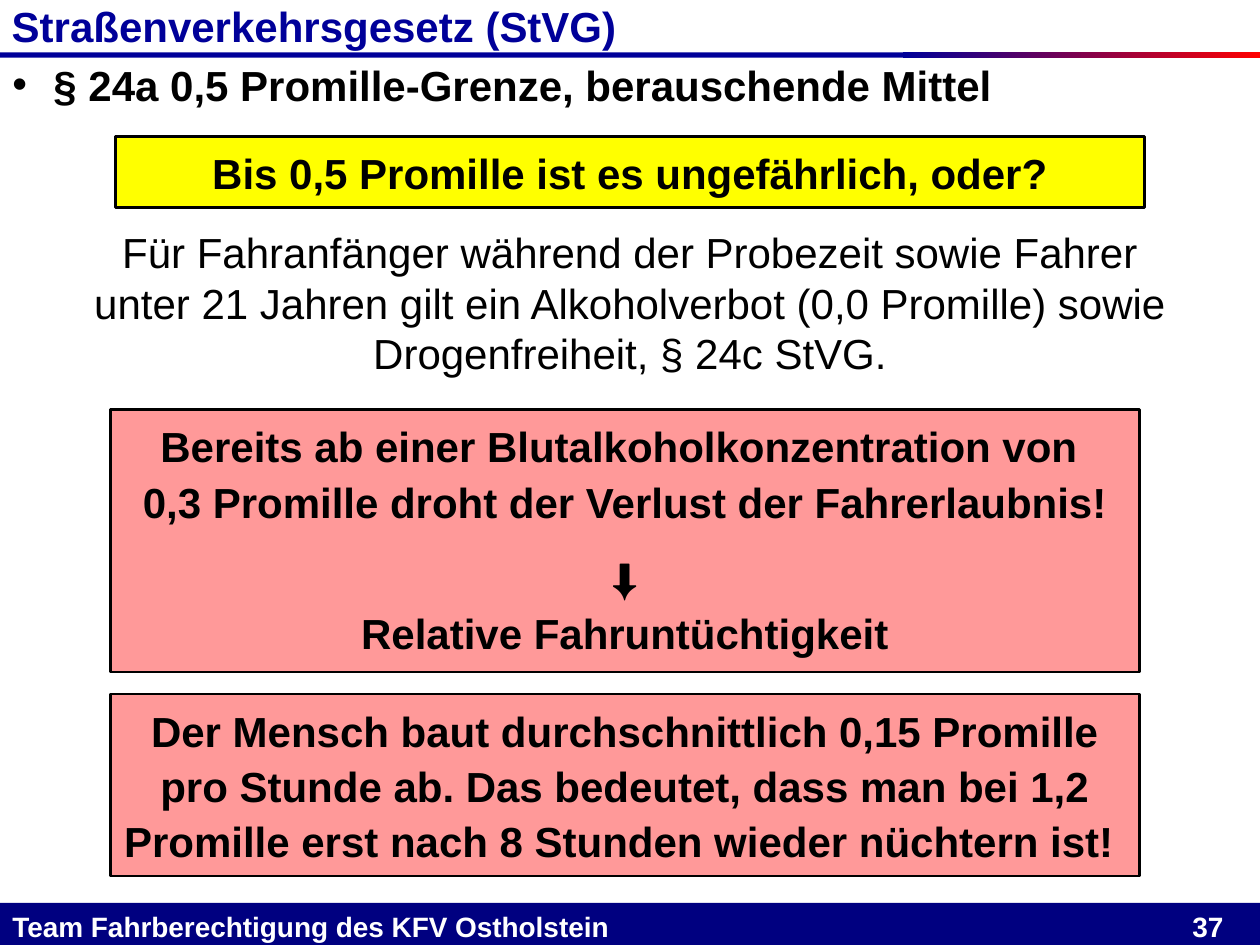
from pptx import Presentation
from pptx.dml.color import RGBColor
from pptx.enum.shapes import MSO_SHAPE
from pptx.enum.text import MSO_ANCHOR, PP_ALIGN
from pptx.oxml.ns import qn
from pptx.util import Pt
from lxml import etree

BLUE = RGBColor(0x00, 0x00, 0x99)
NAVY = RGBColor(0x00, 0x00, 0x80)
RED = RGBColor(0xFF, 0x00, 0x00)
YELLOW = RGBColor(0xFF, 0xFF, 0x00)
PINK = RGBColor(0xFF, 0x99, 0x99)
BLACK = RGBColor(0x00, 0x00, 0x00)
WHITE = RGBColor(0xFF, 0xFF, 0xFF)

presentation = Presentation()
presentation.slide_width, presentation.slide_height = Pt(720), Pt(540)
slide = presentation.slides.add_slide(presentation.slide_layouts[6])


def add_box(left, top, width, height, fill=None, outlined=False):
    """Add a rectangle, or a plain text box when there is no fill."""
    bounds = Pt(left), Pt(top), Pt(width), Pt(height)
    if fill is None:
        shape = slide.shapes.add_textbox(*bounds)
    else:
        shape = slide.shapes.add_shape(MSO_SHAPE.RECTANGLE, *bounds)
        shape.shadow.inherit = False
        shape.fill.solid()
        shape.fill.fore_color.rgb = fill
        if outlined:
            shape.line.color.rgb = BLACK
            shape.line.width = Pt(1.5)
        else:
            shape.line.fill.background()
    shape.text_frame.word_wrap = True
    shape.text_frame.vertical_anchor = MSO_ANCHOR.TOP
    return shape


def write(shape, paragraphs, size=24, color=BLACK, bold=True,
          align=PP_ALIGN.LEFT, spacing=1.0):
    """Fill a shape with paragraphs in one style."""
    text_frame = shape.text_frame
    text_frame.text = "\n".join(paragraphs)
    for index, paragraph in enumerate(text_frame.paragraphs):
        paragraph.alignment = align
        paragraph.line_spacing = spacing
        paragraph.space_before = Pt(12 if index else 0)
        for run in paragraph.runs:
            run.font.name = "Arial"
            run.font.size = Pt(size)
            run.font.bold = bold
            run.font.color.rgb = color


# Rule under the title: solid part, then blue fading to red
add_box(0, 30, 516, 3, BLUE)
fading_rule = add_box(516, 30, 204, 3, BLUE)
fading_rule.fill.gradient()
fading_rule.fill.gradient_angle = 0
for stop, color in zip(fading_rule.fill.gradient_stops, (BLUE, RED)):
    stop.color.rgb = color
    stop.position = 0 if color == BLUE else 1

# Footer with the page number on a right tab
footer = add_box(0, 516, 720, 24, NAVY)
write(footer, ["Team Fahrberechtigung des KFV Ostholstein\t37"], 16, WHITE)
footer_properties = footer.text_frame.paragraphs[0]._p.get_or_add_pPr()
tab_list = etree.SubElement(footer_properties, qn("a:tabLst"))
etree.SubElement(tab_list, qn("a:tab"), pos=str(Pt(692)), algn="r")

# Title
title = add_box(0, 0, 660, 29)
title_frame = title.text_frame
title_frame.margin_left = Pt(6.7)
title_frame.margin_right = title_frame.margin_top = title_frame.margin_bottom = 0
write(title, ["Straßenverkehrsgesetz (StVG)"], color=BLUE)

# Bulleted heading
heading = add_box(0, 36, 654, 30)
write(heading, ["§ 24a 0,5 Promille-Grenze, berauschende Mittel"], spacing=0.8)
heading_properties = heading.text_frame.paragraphs[0]._p.get_or_add_pPr()
heading_properties.set("marL", str(Pt(23.5)))
heading_properties.set("indent", str(-Pt(23.5)))
etree.SubElement(heading_properties, qn("a:buFont"), typeface="Arial")
etree.SubElement(heading_properties, qn("a:buChar"), char="•")

# Rule for novice drivers
novice_rule = add_box(33, 126, 654, 94)
write(novice_rule, [
    "Für Fahranfänger während der Probezeit sowie Fahrer unter 21 Jahren gilt "
    "ein Alkoholverbot (0,0 Promille) sowie Drogenfreiheit, § 24c StVG."
], bold=False, align=PP_ALIGN.CENTER)

# Outlined boxes: left, top, height, fill, paragraphs
message_boxes = [
    (66, 78, 40.5, YELLOW, ["Bis 0,5 Promille ist es ungefährlich, oder?"]),
    (63, 234, 150, PINK, [
        "Bereits ab einer Blutalkoholkonzentration von \v"
        "0,3 Promille droht der Verlust der Fahrerlaubnis!",
        "⬇\vRelative Fahruntüchtigkeit"]),
    (63, 396.5, 104, PINK, [
        "Der Mensch baut durchschnittlich 0,15 Promille pro Stunde ab. "
        "Das bedeutet, dass man bei 1,2 Promille erst nach 8 Stunden "
        "wieder nüchtern ist! "]),
]
for left, top, height, fill, paragraphs in message_boxes:
    message_box = add_box(left, top, 588, height, fill, outlined=True)
    write(message_box, paragraphs, align=PP_ALIGN.CENTER, spacing=1.1)

presentation.save("out.pptx")
